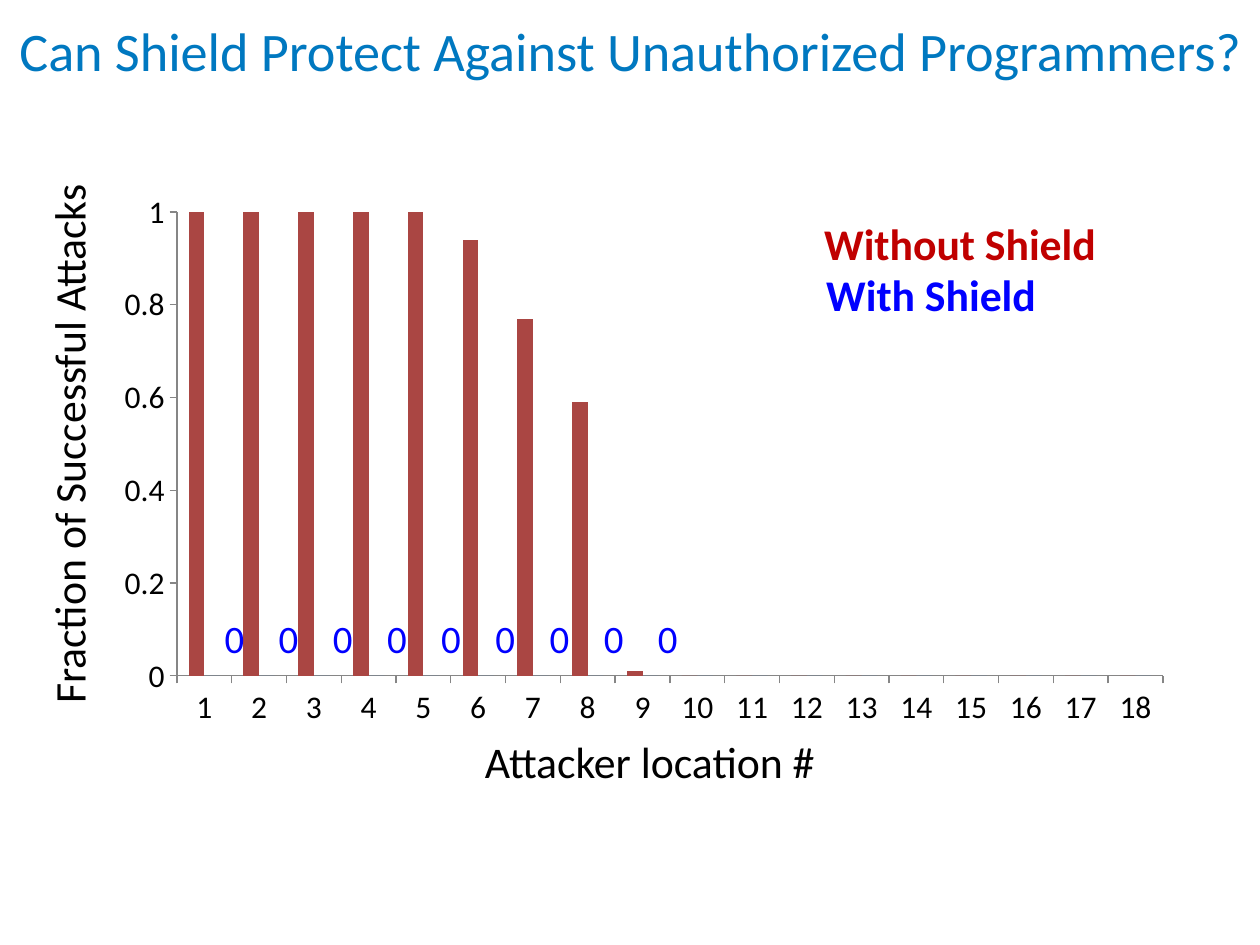
from lxml import etree
from pptx import Presentation
from pptx.chart.data import CategoryChartData
from pptx.dml.color import RGBColor
from pptx.enum.chart import XL_CHART_TYPE as ChartType, XL_TICK_MARK as Tick
from pptx.enum.text import MSO_ANCHOR as Anchor, PP_ALIGN as Align
from pptx.oxml.ns import qn
from pptx.util import Inches, Pt

FONT = "Calibri"
COLORS = {
    "title": "0078C0",
    "text": "000000",
    "without": "C00000",
    "with": "0000FF",
    "bar_without": "AA4643",
    "bar_with": "4F81BD",
    "axis": "868686",
}
WITHOUT_SHIELD = [1] * 5 + [0.94, 0.77, 0.59, 0.01] + [0] * 9
WITH_SHIELD = [0] * 18


def rgb(name):
    return RGBColor.from_string(COLORS[name])


def add_text(slide, box, text, size, color, bold=False, align=Align.CENTER,
             anchor=Anchor.MIDDLE):
    tb = slide.shapes.add_textbox(*[Inches(v) for v in box])
    tf = tb.text_frame
    tf.text = text
    tf.word_wrap = True
    tf.vertical_anchor = anchor
    p = tf.paragraphs[0]
    p.alignment = align
    font = p.runs[0].font
    font.name, font.size, font.bold = FONT, Pt(size), bold
    font.color.rgb = rgb(color)
    return tb


def set_plot_area(chart, x, y, w, h):
    """Fix the inner plot area, in fractions of the chart frame."""
    plot_area = chart._chartSpace.chart.plotArea
    for old in plot_area.findall(qn("c:layout")):
        plot_area.remove(old)
    layout = etree.Element(qn("c:layout"))
    manual = etree.SubElement(layout, qn("c:manualLayout"))
    settings = [("layoutTarget", "inner"), ("xMode", "edge"), ("yMode", "edge"),
                ("x", x), ("y", y), ("w", w), ("h", h)]
    for tag, val in settings:
        etree.SubElement(manual, qn("c:" + tag)).set("val", str(val))
    plot_area.insert(0, layout)


def add_attack_chart(slide, box):
    data = CategoryChartData()
    data.categories = [str(n) for n in range(1, 19)]
    data.add_series("Without Shield", WITHOUT_SHIELD)
    data.add_series("With Shield", WITH_SHIELD)
    chart = slide.shapes.add_chart(
        ChartType.COLUMN_CLUSTERED, *[Inches(v) for v in box], data).chart
    chart.has_legend = chart.has_title = False
    chart.font.name, chart.font.size = FONT, Pt(18)
    chart.font.color.rgb = rgb("text")

    # Bars
    plot = chart.plots[0]
    plot.gap_width, plot.overlap = 150, 0
    plot.vary_by_categories = False
    for series, color in zip(plot.series, ("bar_without", "bar_with")):
        series.format.fill.solid()
        series.format.fill.fore_color.rgb = rgb(color)

    # Axes
    for axis in (chart.category_axis, chart.value_axis):
        axis.has_major_gridlines = False
        axis.major_tick_mark = Tick.OUTSIDE
        axis.minor_tick_mark = Tick.NONE
        axis.format.line.color.rgb = rgb("axis")
        axis.format.line.width = Pt(0.75)
    value_axis = chart.value_axis
    value_axis.minimum_scale, value_axis.maximum_scale = 0, 1
    value_axis.major_unit = 0.2
    value_axis.tick_labels.number_format = "General"
    value_axis.tick_labels.number_format_is_linked = False
    set_plot_area(chart, 0.068, 0.055, 0.911, 0.835)


def add_axis_titles(slide):
    y_title = add_text(slide, (-3.96, 2.9, 9, 1.25),
                       "Fraction of Successful Attacks", 25, "text")
    y_title.rotation = 270
    add_text(slide, (3.75, 5.78, 2.87, 0.52), "Attacker location #", 25, "text",
             align=Align.LEFT, anchor=Anchor.TOP)


def add_key(slide):
    add_text(slide, (3.12, 1.3, 9, 1.25), "Without Shield", 25, "without", True)
    add_text(slide, (2.89, 1.71, 9, 1.25), "With Shield", 25, "with", True)


def add_zero_labels(slide, left, top, step, count):
    for i in range(count):
        add_text(slide, (left + i * step, top, 0.72, 0.44), "0", 22.2, "with")


def main():
    prs = Presentation()
    prs.slide_width, prs.slide_height = Inches(10), Inches(7.5)
    s = prs.slides.add_slide(prs.slide_layouts[6])

    add_attack_chart(s, (0.82, 1.44, 8.59, 4.41))
    add_axis_titles(s)
    add_key(s)
    add_zero_labels(s, 1.5, 4.84, 0.43, 9)

    # Slide title
    title = add_text(s, (0, 0.01, 10, 0.77),
                     "Can Shield Protect Against Unauthorized Programmers?",
                     31, "title")
    title.text_frame.margin_left = title.text_frame.margin_right = 0

    prs.save("out.pptx")


if __name__ == "__main__":
    main()
